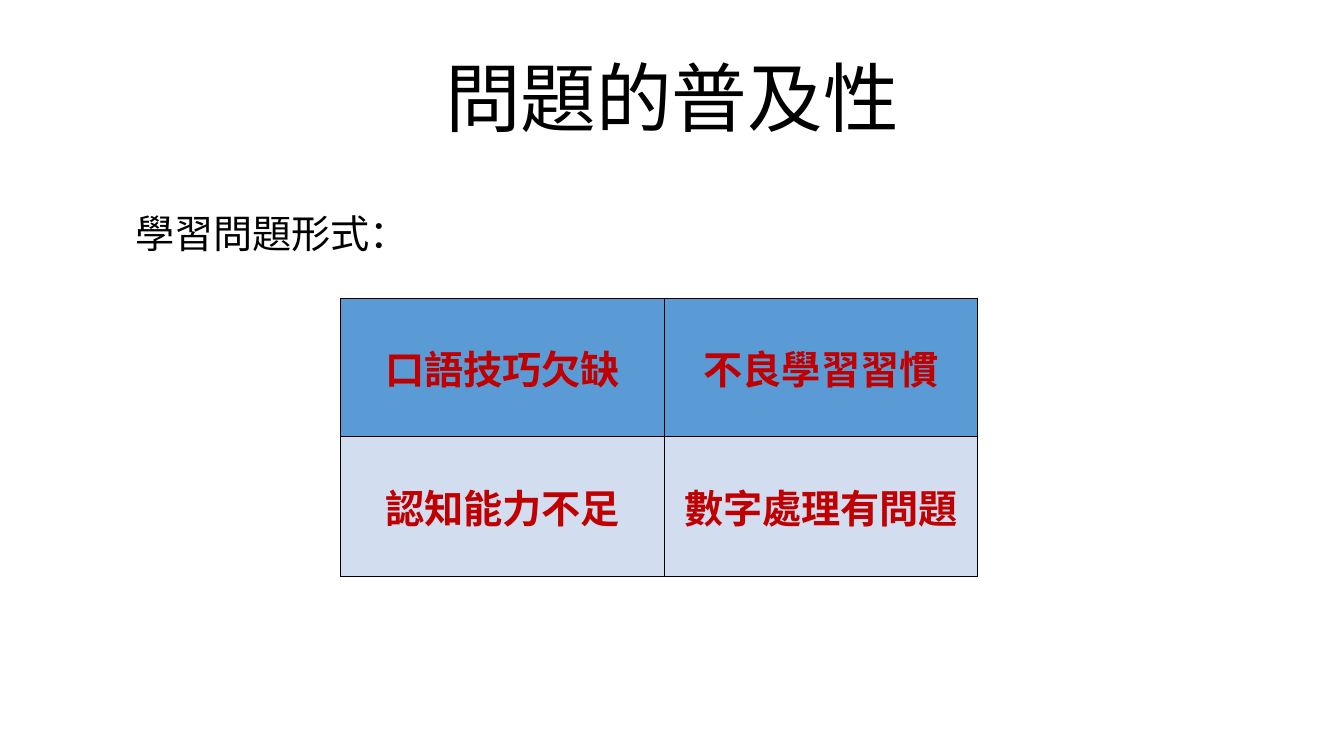
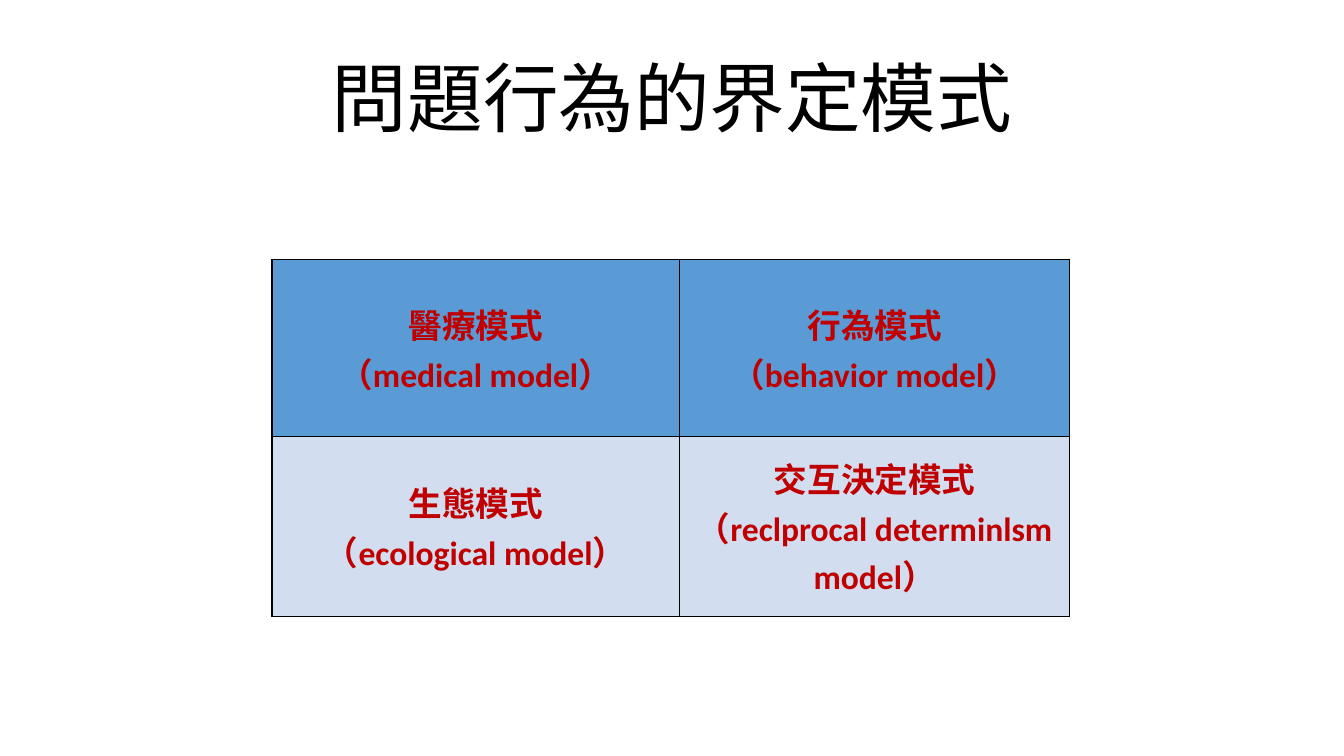
import pptx
import pptx.util
import pptx.dml.color
import pptx.enum.text
import pptx.oxml
import pptx.oxml.ns

PX = 9525
COLORS = {"text": "000000", "accent": "C00000", "head": "5B9BD5", "body": "D2DEEF", "border": "000000"}
EA_FONT = "Noto Sans CJK SC"
ALIGN = pptx.enum.text.PP_ALIGN
ANCHOR = pptx.enum.text.MSO_ANCHOR

TITLE = {"name": EA_FONT, "size": pptx.util.Pt(54), "bold": False}
SUBTITLE = {"name": "Arial", "size": pptx.util.Pt(28), "bold": False}
TITLE_PARA = {"alignment": ALIGN.CENTER, "line_spacing": 0.9, "space_before": pptx.util.Pt(0)}
SUBTITLE_PARA = {"alignment": ALIGN.LEFT, "line_spacing": 0.9, "space_before": pptx.util.Pt(10)}
CELL_PARA = {"alignment": ALIGN.CENTER}

SLIDES = [
    {
        "layout": 0,
        "title": "問題的普及性",
        "subtitle": "學習問題形式：",
        "at": (324, 284),
        "cols": (309, 298),
        "rows": (132, 133),
        "size": 28,
        "cells": [["口語技巧欠缺", "不良學習習慣"], ["認知能力不足", "數字處理有問題"]],
    },
    {
        "layout": 5,
        "title": "問題行為的界定模式",
        "at": (259, 247),
        "cols": (388, 372),
        "rows": (169, 171),
        "size": 24,
        "cells": [
            ["醫療模式\n（medical model）", "行為模式\n（behavior model）"],
            ["生態模式\n（ecological model）", "交互決定模式\n（reclprocal determinlsm model）"],
        ],
    },
]


def write(tf, text, color, font, para, anchor):
    tf.text = text
    tf.word_wrap = True
    for p in tf.paragraphs:
        for key, value in para.items():
            setattr(p, key, value)
        for r in p.runs:
            for key, value in font.items():
                setattr(r.font, key, value)
            r.font.color.rgb = pptx.dml.color.RGBColor.from_string(COLORS[color])
            ea = pptx.oxml.parse_xml(f'<a:ea {pptx.oxml.ns.nsdecls("a")} typeface="{EA_FONT}"/>')
            r.font._element.find(pptx.oxml.ns.qn("a:latin")).addnext(ea)
    tf.vertical_anchor = anchor


def place(sp, *box):
    for key, value in zip(("left", "top", "width", "height"), box):
        setattr(sp, key, value * PX)
    sp.text_frame.auto_size = pptx.enum.text.MSO_AUTO_SIZE.NONE


prs = pptx.Presentation()
prs.slide_width = 1280 * PX
prs.slide_height = 720 * PX

for data in SLIDES:
    s = prs.slides.add_slide(prs.slide_layouts[data["layout"]])
    title = s.shapes.title
    place(title, 48, 23, 1184, 118)
    write(title.text_frame, data["title"], "text", TITLE, TITLE_PARA, ANCHOR.BOTTOM)

    if "subtitle" in data:
        sub = s.placeholders[1]
        place(sub, 119, 200, 412, 65)
        write(sub.text_frame, data["subtitle"], "text", SUBTITLE, SUBTITLE_PARA, ANCHOR.TOP)

    box = (*data["at"], sum(data["cols"]), sum(data["rows"]))
    tbl = s.shapes.add_table(2, 2, *(v * PX for v in box)).table
    for col, width in zip(tbl.columns, data["cols"]):
        col.width = width * PX
    for row, height in zip(tbl.rows, data["rows"]):
        row.height = height * PX

    cell_font = {"name": "Calibri", "size": pptx.util.Pt(data["size"]), "bold": True}
    for row, texts, fill in zip(tbl.rows, data["cells"], ("head", "body")):
        for cell, text in zip(row.cells, texts):
            write(cell.text_frame, text, "accent", cell_font, CELL_PARA, None)
            cell.vertical_anchor = ANCHOR.MIDDLE
            cell.fill.solid()
            cell.fill.fore_color.rgb = pptx.dml.color.RGBColor.from_string(COLORS[fill])
            tcPr = cell._tc.get_or_add_tcPr()
            for i, side in enumerate("LRTB"):
                tcPr.insert(i, pptx.oxml.parse_xml(
                    f'<a:ln{side} {pptx.oxml.ns.nsdecls("a")} w="12700"><a:solidFill>'
                    f'<a:srgbClr val="{COLORS["border"]}"/></a:solidFill></a:ln{side}>'))

prs.save("out.pptx")
